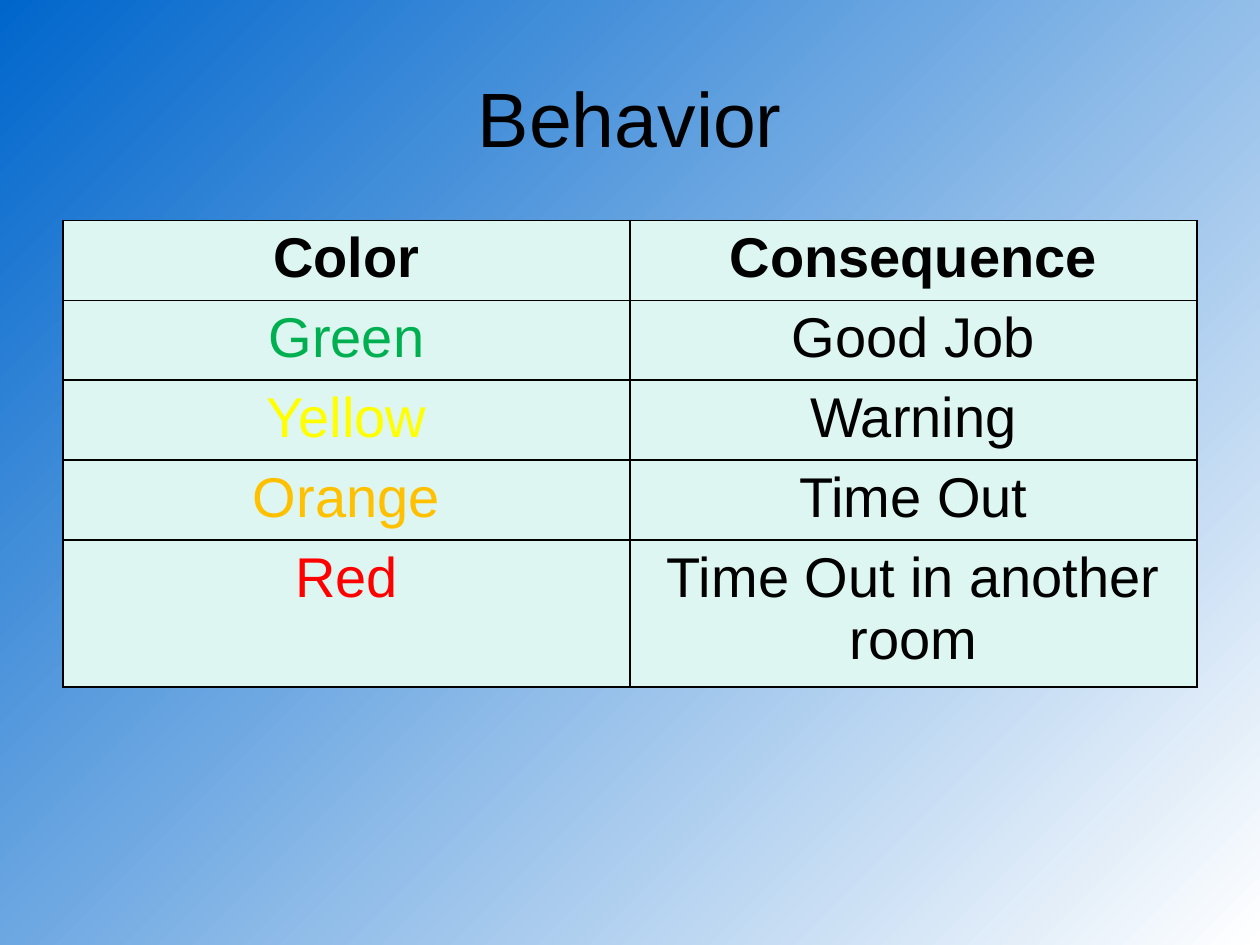
from lxml.etree import SubElement
from pptx import Presentation
from pptx.dml.color import RGBColor
from pptx.enum.text import MSO_ANCHOR as Anchor, PP_ALIGN as Align
from pptx.oxml.ns import qn
from pptx.util import Inches, Pt

COLORS = {
    "sky": "0066CC",
    "white": "FFFFFF",
    "black": "000000",
    "mint": "DEF6F1",
    "Green": "00B050",
    "Yellow": "FFFF00",
    "Orange": "FFC000",
    "Red": "FF0000",
}
ROWS = [
    ("Color", "Consequence"),
    ("Green", "Good Job"),
    ("Yellow", "Warning"),
    ("Orange", "Time Out"),
    ("Red", "Time Out in another room"),
]


def rgb(name):
    return RGBColor.from_string(COLORS[name])


def write_text(text_frame, text, color="black", **font_format):
    paragraph = text_frame.paragraphs[0]
    paragraph.alignment = Align.CENTER
    run = paragraph.add_run()
    run.text = text
    run.font.color.rgb = rgb(color)
    for name, value in {"name": "Arial", **font_format}.items():
        setattr(run.font, name, value)


def paint_background(slide):
    fill = slide.background.fill
    fill.gradient()
    fill.gradient_angle = 315
    for stop, color, position in zip(fill.gradient_stops, ("sky", "white"), (0, 1)):
        stop.color.rgb = rgb(color)
        stop.position = position


def add_title(slide, text):
    shape = slide.shapes.add_textbox(Inches(0.5), Inches(0.3), Inches(9), Inches(1.25))
    text_frame = shape.text_frame
    text_frame.word_wrap = True
    text_frame.vertical_anchor = Anchor.MIDDLE
    write_text(text_frame, text, size=Pt(44))


def add_borders(cell):
    properties = cell._tc.get_or_add_tcPr()
    for index, side in enumerate(("a:lnL", "a:lnR", "a:lnT", "a:lnB")):
        line = SubElement(properties, qn(side), w=str(Pt(1)))
        fill = SubElement(line, qn("a:solidFill"))
        SubElement(fill, qn("a:srgbClr"), val=COLORS["black"])
        properties.insert(index, line)


def add_behavior_table(slide, rows):
    frame = slide.shapes.add_table(
        len(rows), len(rows[0]), Inches(0.5), Inches(1.75), Inches(9), Inches(3.7)
    )
    table = frame.table
    for row_index, texts in enumerate(rows):
        table.rows[row_index].height = Inches(0.41)
        for column_index, text in enumerate(texts):
            cell = table.cell(row_index, column_index)
            cell.fill.solid()
            cell.fill.fore_color.rgb = rgb("mint")
            cell.vertical_anchor = Anchor.TOP
            color = text if text in COLORS else "black"
            write_text(cell.text_frame, text, color, size=Pt(32), bold=row_index == 0)
            add_borders(cell)
    frame.height = Inches(3.7)


def main():
    presentation = Presentation()
    presentation.slide_width = Inches(10)
    presentation.slide_height = Inches(7.5)
    slide = presentation.slides.add_slide(presentation.slide_layouts[6])
    paint_background(slide)
    add_title(slide, "Behavior")
    add_behavior_table(slide, ROWS)
    presentation.save("out.pptx")


if __name__ == "__main__":
    main()
